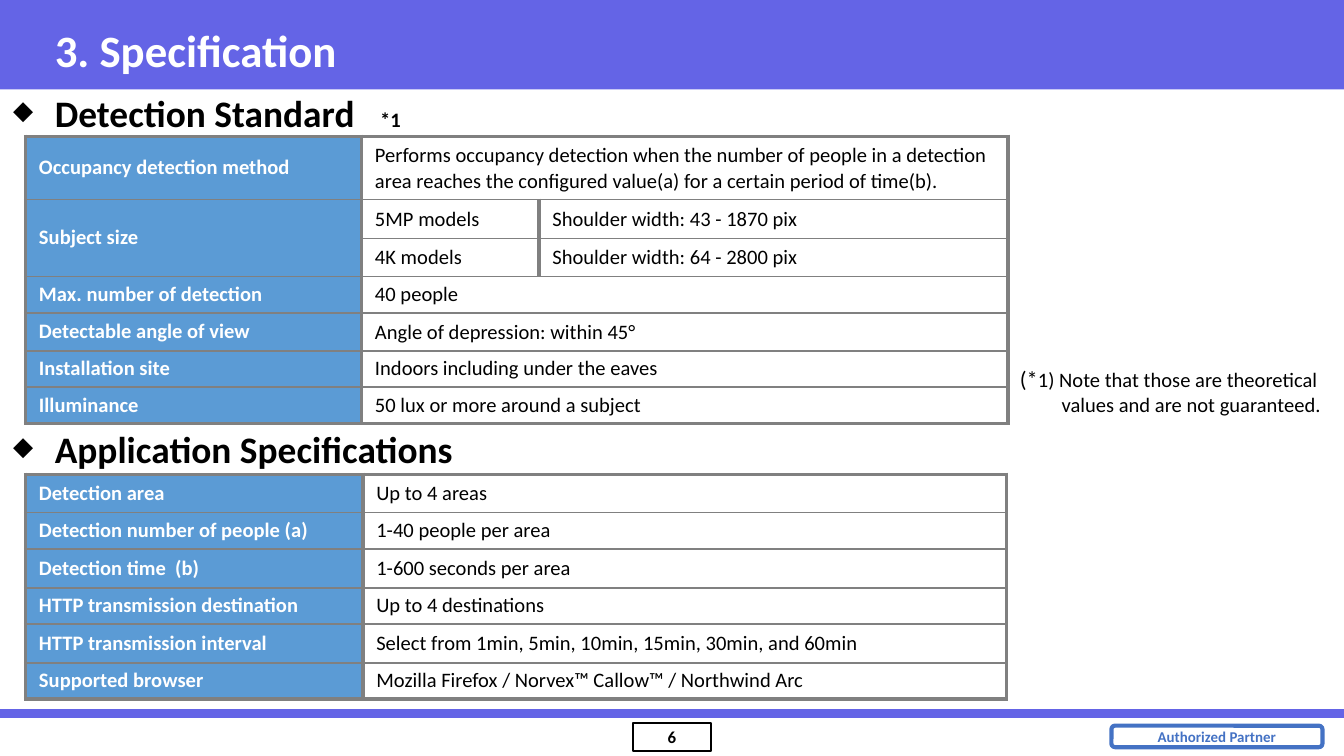
from dataclasses import dataclass

from lxml.etree import SubElement
from pptx import Presentation
from pptx.dml.color import RGBColor
from pptx.enum.shapes import MSO_CONNECTOR, MSO_SHAPE
from pptx.enum.text import MSO_ANCHOR, PP_ALIGN
from pptx.oxml import parse_xml
from pptx.oxml.ns import nsdecls, qn
from pptx.util import Inches, Pt


@dataclass(frozen=True)
class Theme:
    font: str = "Calibri"
    band: str = "6464E6"
    label: str = "5B9BD5"
    edge: str = "808080"
    badge: str = "4472C4"
    ink: str = "000000"
    paper: str = "FFFFFF"
    title: float = 24
    head: float = 20
    star: float = 12
    body: float = 11
    page: float = 9
    small: float = 8
    thick: float = 2.25
    thin: float = 1


T = Theme()
COLS, ROWS = 100, 56.25  # square grid of tenths of an inch
TIGHT = 0.9


def unit(n):
    return Inches(n / 10)


def place(box):
    return [unit(n) for n in box]


def color(code):
    return RGBColor.from_string(code)


def write(para, text, size, tint=T.ink, bold=False):
    run = para.add_run()
    run.text = text
    font = run.font
    font.name, font.size, font.bold = T.font, Pt(size), bold
    font.color.rgb = color(tint)
    return run


def text_box(slide, box, anchor=MSO_ANCHOR.MIDDLE):
    frame = slide.shapes.add_textbox(*place(box)).text_frame
    frame.word_wrap = True
    frame.vertical_anchor = anchor
    return frame


def panel(slide, kind, box, fill=None, edge=None, width=T.thin):
    shape = slide.shapes.add_shape(kind, *place(box))
    shape.shadow.inherit = False
    if fill:
        shape.fill.solid()
        shape.fill.fore_color.rgb = color(fill)
    else:
        shape.fill.background()
    if edge:
        shape.line.color.rgb = color(edge)
        shape.line.width = Pt(width)
    else:
        shape.line.fill.background()
    return shape


def caption(shape, text, size, tint):
    frame = shape.text_frame
    frame.vertical_anchor = MSO_ANCHOR.MIDDLE
    para = frame.paragraphs[0]
    para.alignment = PP_ALIGN.CENTER
    write(para, text, size, tint, True)
    return frame


def header(slide, box, text):
    x, y, w, h = box
    panel(slide, MSO_SHAPE.RECTANGLE, box, T.band)
    frame = text_box(slide, (x + 3.1, y + 0.8, w - 7.4, h - 0.9))
    write(frame.paragraphs[0], text, T.title, T.paper, True)


def footer(slide, box, page, badge):
    x, y, w, h = box
    # Rule across the slide
    rule = slide.shapes.add_connector(
        MSO_CONNECTOR.STRAIGHT, unit(x), unit(y), unit(x + w), unit(y))
    rule.line.color.rgb = color(T.band)
    rule.line.width = Pt(2 * T.thick)
    SubElement(rule.element.spPr, qn("a:effectLst"))
    # Page number
    wide = 5.8
    tile = panel(slide, MSO_SHAPE.RECTANGLE,
                 (x + (w - wide) / 2, y + 0.7, wide, 2.1), edge=T.ink)
    frame = caption(tile, page, T.page, T.ink)
    frame.margin_left = frame.margin_right = unit(0.3)
    frame.margin_top = frame.margin_bottom = unit(0.3)
    # Partner badge
    tag = panel(slide, MSO_SHAPE.ROUNDED_RECTANGLE,
                (x + w - 17.3, y + 0.9, 15.7, 1.6), edge=T.badge, width=T.thick)
    caption(tag, badge, T.small, T.badge).word_wrap = False


def heading(slide, box, text, mark=None):
    para = text_box(slide, box).paragraphs[0]
    props = para._p.get_or_add_pPr()
    props.set("marL", str(unit(3.1)))
    props.set("indent", str(-unit(3.1)))
    SubElement(props, qn("a:buSzPct")).set("val", "70000")
    SubElement(props, qn("a:buChar")).set("char", "◆")
    write(para, text, T.head, bold=True)
    if mark:
        # One widened space keeps the mark apart from the heading
        gap = write(para, " ", T.head, bold=True)
        gap.font._element.set("spc", "900")
        write(para, mark, T.body, bold=True)


def note(slide, box, star, first, second):
    frame = text_box(slide, box, MSO_ANCHOR.TOP)
    para = frame.paragraphs[0]
    write(para, star, T.star)
    write(para, first, T.body)
    para = frame.add_paragraph()
    para._p.get_or_add_pPr().set("marL", str(unit(3.1)))
    write(para, second, T.body)


def border(cell, first, last):
    props = cell._tc.get_or_add_tcPr()
    sides = (("L", T.thick), ("R", T.thick),
             ("T", T.thick if first else T.thin),
             ("B", T.thick if last else T.thin))
    for spot, (side, width) in enumerate(sides):
        props.insert(spot, parse_xml(
            f'<a:ln{side} {nsdecls("a")} w="{Pt(width)}"><a:solidFill>'
            f'<a:srgbClr val="{T.edge}"/></a:solidFill></a:ln{side}>'))


def spec_table(slide, box, cols, rows, data, loose):
    """Blue labels at left; None joins a label to the cell above it,
    and a short row stretches its last value over the remaining columns."""
    grid = slide.shapes.add_table(len(rows), len(cols), *place(box)).table
    grid.first_row = grid.horz_banding = False
    for col, wide in zip(grid.columns, cols):
        col.width = unit(wide)
    for row, high in zip(grid.rows, rows):
        row.height = unit(high)
    last = len(cols) - 1
    for r, line in enumerate(data):
        for c in range(len(cols)):
            cell = grid.cell(r, c)
            cell.vertical_anchor = MSO_ANCHOR.MIDDLE
            cell.fill.solid()
            cell.fill.fore_color.rgb = color(T.paper if c else T.label)
            border(cell, r == 0, r == len(rows) - 1)
            if c < len(line) and line[c]:
                para = cell.text_frame.paragraphs[0]
                if c == 0 or r not in loose:
                    para.line_spacing = TIGHT
                write(para, line[c], T.body, T.ink if c else T.paper, c == 0)
        if line[0] is None:
            grid.cell(r - 1, 0).merge(grid.cell(r, 0))
        if len(line) <= last:
            grid.cell(r, len(line) - 1).merge(grid.cell(r, last))


STANDARD = [
    ("Occupancy detection method",
     "Performs occupancy detection when the number of people in a detection "
     "area reaches the configured value(a) for a certain period of time(b)."),
    ("Subject size", "5MP models", "Shoulder width: 43 - 1870 pix"),
    (None, "4K models", "Shoulder width: 64 - 2800 pix"),
    ("Max. number of detection", "40 people"),
    ("Detectable angle of view", "Angle of depression: within 45°"),
    ("Installation site", "Indoors including under the eaves"),
    ("Illuminance", "50 lux or more around a subject"),
]
APP = [
    ("Detection area", "Up to 4 areas"),
    ("Detection number of people (a)", "1-40 people per area"),
    ("Detection time  (b)", "1-600 seconds per area"),
    ("HTTP transmission destination", "Up to 4 destinations"),
    ("HTTP transmission interval",
     "Select from 1min, 5min, 10min, 15min, 30min, and 60min"),
    ("Supported browser", "Mozilla Firefox / Norvex™ Callow™ / Northwind Arc"),
]


def main():
    deck = Presentation()
    deck.slide_width, deck.slide_height = unit(COLS), unit(ROWS)
    slide = deck.slides.add_slide(deck.slide_layouts[6])
    header(slide, (0, 0, COLS, 6.65), "3. Specification")
    footer(slide, (0, 53.1, COLS, 3.1), "6", "Authorized Partner")
    note(slide, (74.9, 26.7, 25.1, 4.9), "(*",
         "1) Note that those are theoretical", "values and are not guaranteed.")
    # Detection standard
    heading(slide, (0, 6.2, 95.3, 4.4), "Detection Standard", "*1")
    spec_table(slide, (1.9, 10.15, 73.1, 21.3), (25, 13.2, 34.9),
               (4.7, 2.9, 2.8, 2.7, 2.8, 2.7, 2.7), STANDARD, {0, 1, 2, 4})
    # Application specifications
    heading(slide, (0, 31.2, 60.7, 4.4), "Application Specifications")
    spec_table(slide, (1.9, 35.3, 73, 16.7), (25.1, 47.9),
               (2.8, 2.7, 2.9, 2.7, 2.9, 2.7), APP, {0, 2})
    deck.save("out.pptx")


if __name__ == "__main__":
    main()
